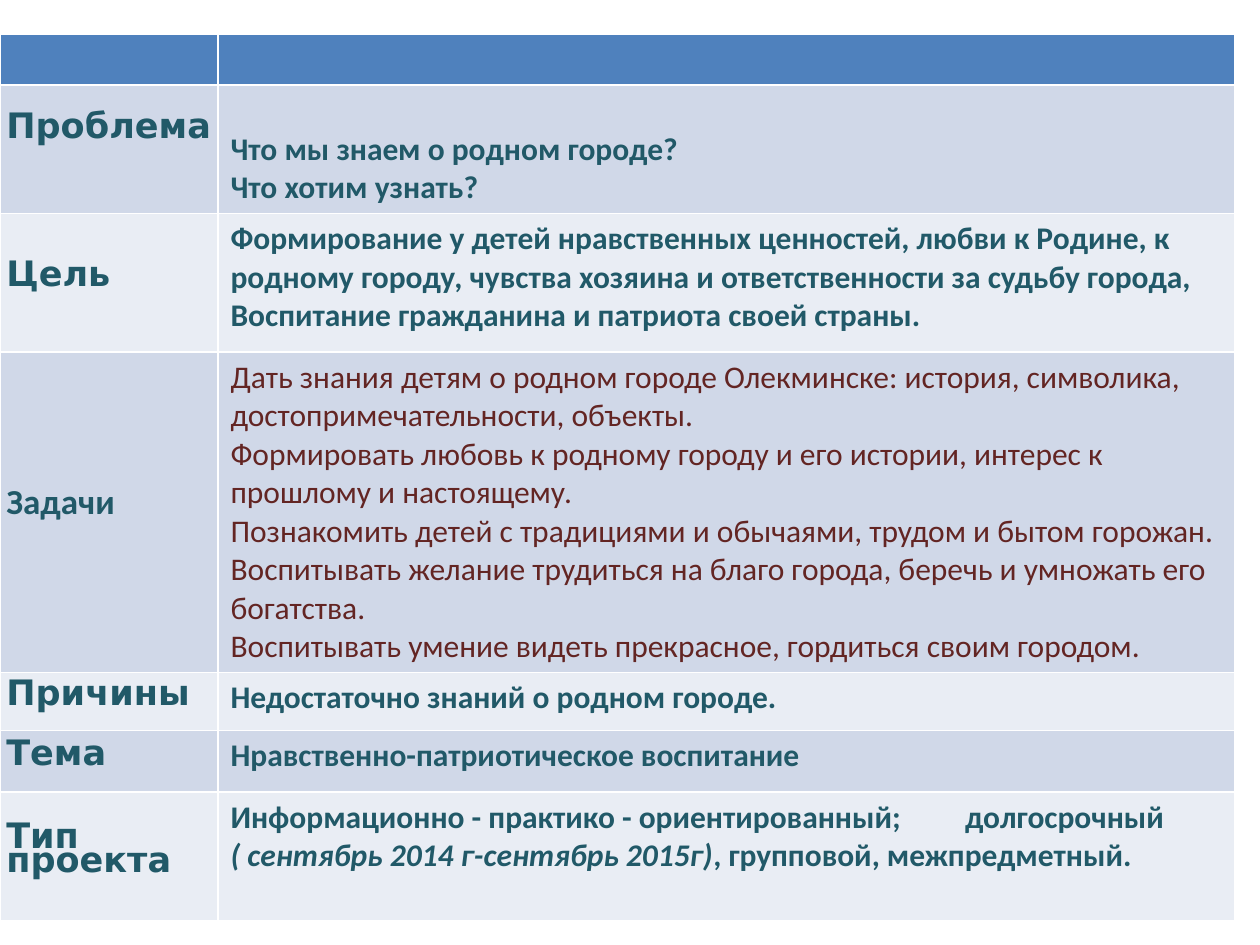
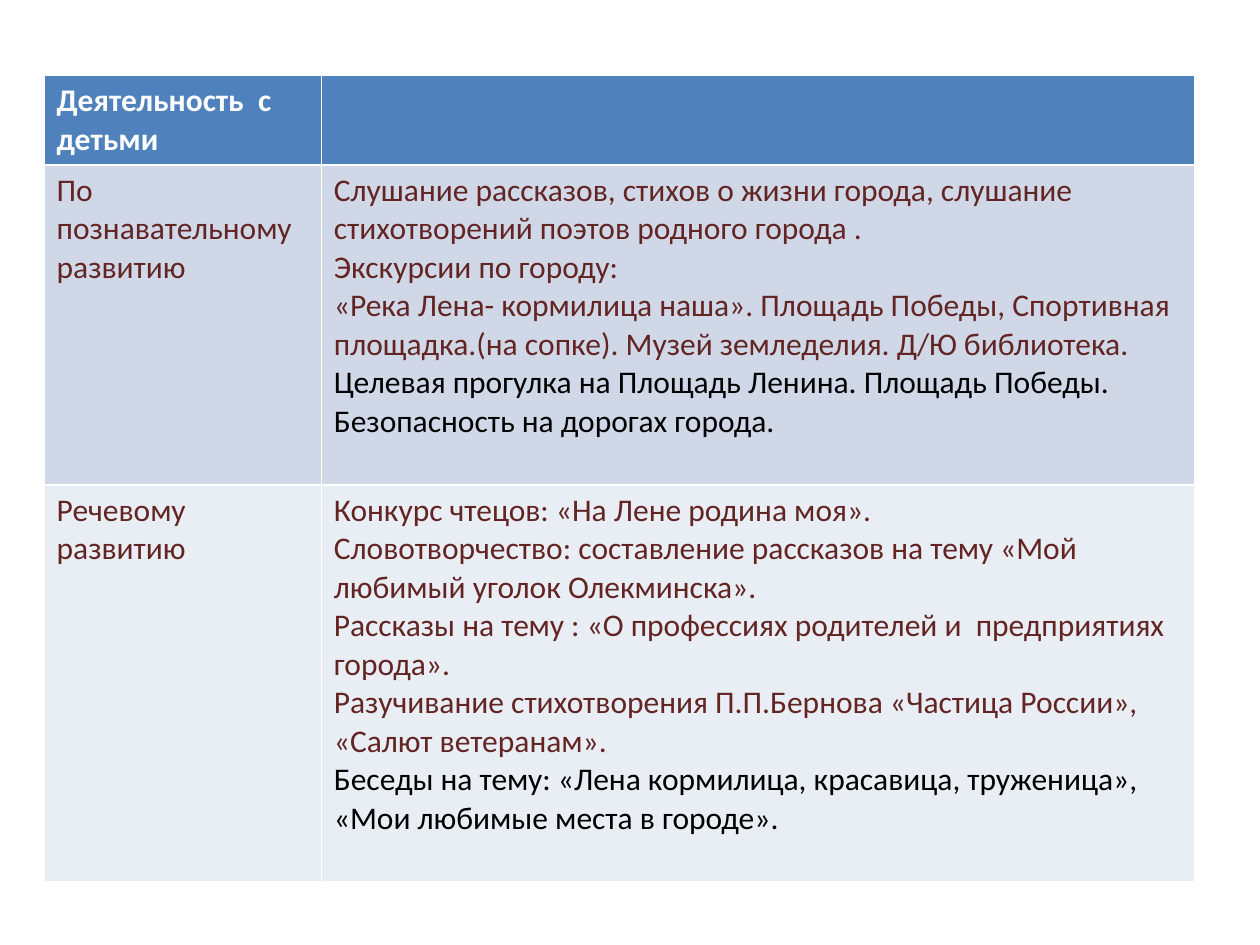
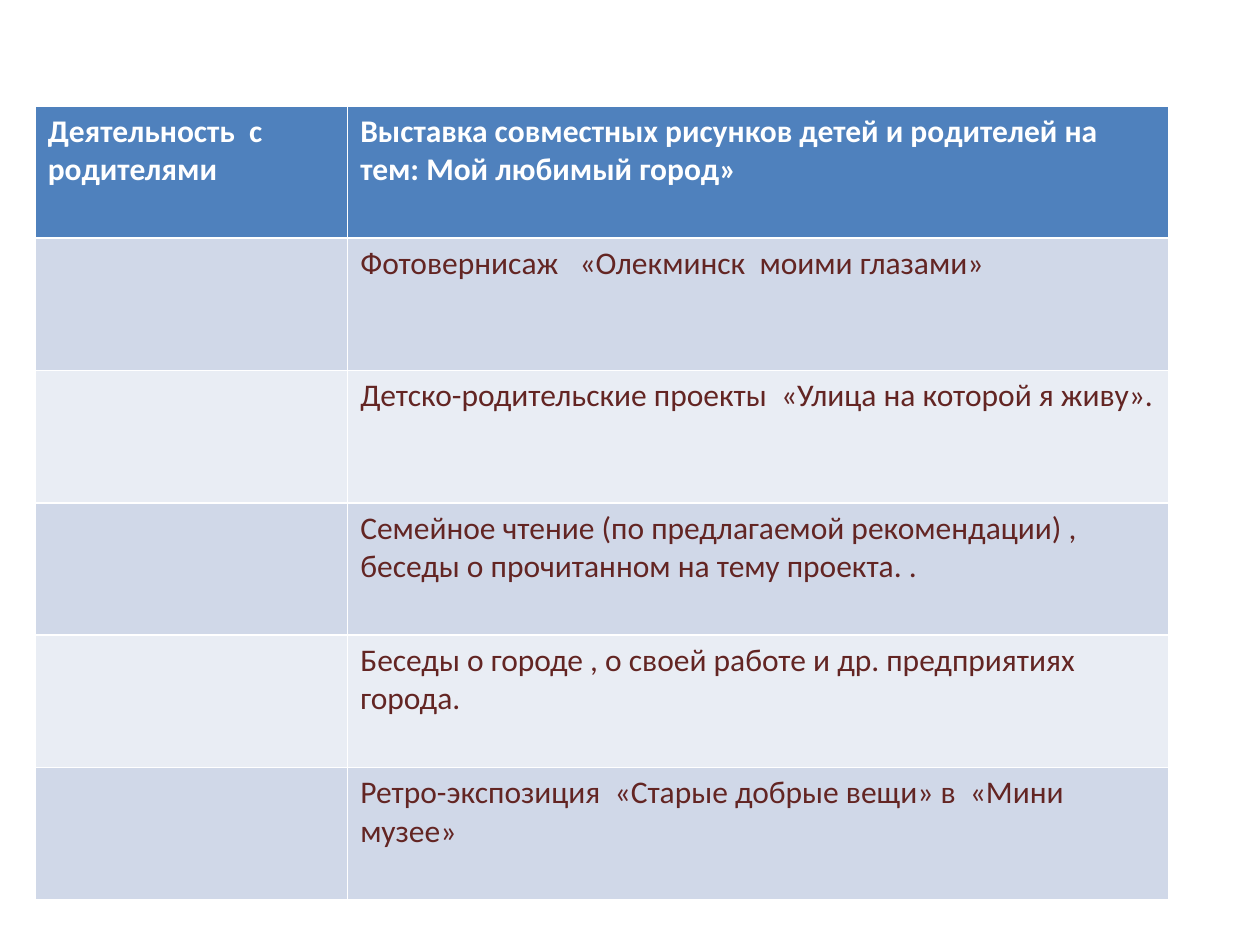
import pptx
import pptx.dml.color
import pptx.enum.text
import pptx.oxml
import pptx.oxml.ns
import pptx.util

RGBColor = pptx.dml.color.RGBColor
Anchor = pptx.enum.text.MSO_ANCHOR
Inches = pptx.util.Inches
Pt = pptx.util.Pt

BLUE = RGBColor(0x4F, 0x81, 0xBD)
BANDS = (RGBColor(0xD0, 0xD8, 0xE8), RGBColor(0xE9, 0xED, 0xF4))
WHITE = RGBColor(0xFF, 0xFF, 0xFF)
BLACK = RGBColor(0, 0, 0)
TEAL = RGBColor(0x21, 0x59, 0x68)
MAROON = RGBColor(0x63, 0x25, 0x23)
BODY_FONT, LABEL_FONT = "Calibri", "DejaVu Sans"

PASSPORT = [
    ("Проблема", ["Что мы знаем о родном городе?", "Что хотим узнать?"]),
    ("Цель", [
        "Формирование у детей нравственных ценностей, любви к Родине, к родному городу, "
        "чувства хозяина и ответственности за судьбу города,",
        "Воспитание гражданина и патриота своей страны."]),
    ("Задачи", [
        "Дать знания детям о родном городе Олекминске: история, символика, "
        "достопримечательности, объекты.",
        "Формировать любовь к родному городу и его истории, интерес к прошлому и настоящему.",
        "Познакомить детей с традициями и обычаями, трудом и бытом горожан.",
        "Воспитывать желание трудиться на благо города, беречь и умножать его богатства.",
        "Воспитывать умение видеть прекрасное, гордиться своим городом."]),
    ("Причины", ["Недостаточно знаний о родном городе."]),
    ("Тема", ["Нравственно-патриотическое воспитание"]),
    ("Тип проекта", []),
]
PROJECT_TYPE = [
    ("Информационно - практико - ориентированный;\tдолгосрочный  ", False),
    ("( сентябрь 2014 г-сентябрь 2015г)", True),
    (", групповой, межпредметный.", False),
]
CHILDREN = [
    ("По познавательному  развитию", [
        "Слушание рассказов, стихов о жизни города, слушание стихотворений поэтов "
        "родного города .",
        "Экскурсии по городу:",
        "«Река Лена- кормилица наша». Площадь Победы, Спортивная площадка.(на сопке). "
        "Музей земледелия. Д/Ю библиотека.",
        "Целевая прогулка на Площадь Ленина. Площадь Победы. Безопасность на дорогах города."]),
    ("Речевому развитию", [
        "Конкурс чтецов: «На Лене родина моя».",
        "Словотворчество: составление рассказов на тему «Мой любимый уголок Олекминска».",
        "Рассказы на тему : «О профессиях родителей и  предприятиях города».",
        "Разучивание стихотворения П.П.Бернова «Частица России», «Салют ветеранам».",
        "Беседы на тему: «Лена кормилица, красавица, труженица», "
        "«Мои любимые места в городе»."]),
]
PARENTS = [
    "Фотовернисаж   «Олекминск  моими глазами»",
    "Детско-родительские проекты  «Улица на которой я живу».",
    "Семейное чтение (по предлагаемой рекомендации) , беседы о прочитанном на тему проекта. .",
    "Беседы о городе , о своей работе и др. предприятиях города.",
    "Ретро-экспозиция  «Старые добрые вещи» в  «Мини музее»",
]


def add_run(p, text, color, bold=False, size=18, font=BODY_FONT, italic=False):
    """Append one formatted run to a paragraph."""
    r = p.add_run()
    r.text = text
    r.font.name, r.font.size = font, Pt(size)
    r.font.bold, r.font.italic = bold, italic
    r.font.color.rgb = color


def write(cell, lines, color, bold=False):
    """Write one paragraph per line into a cell."""
    tf = cell.text_frame
    for i, line in enumerate(lines):
        p = tf.add_paragraph() if i else tf.paragraphs[0]
        add_run(p, line, color, bold)


def write_label(cell, text, font):
    """Write a tightly spaced row label in the middle of its cell."""
    cell.vertical_anchor = Anchor.MIDDLE
    cell.margin_left = Inches(0.05)
    cell.margin_top = cell.margin_right = cell.margin_bottom = Inches(0.01)
    p = cell.text_frame.paragraphs[0]
    p.line_spacing = Pt(13.9)
    add_run(p, text, TEAL, True, 20, font)


def add_tab(p, position):
    """Set one left tab stop on a paragraph."""
    ppr = p._p.get_or_add_pPr()
    tabs = pptx.oxml.parse_xml(
        f'<a:tabLst {pptx.oxml.ns.nsdecls("a")}><a:tab pos="{position}" algn="l"/></a:tabLst>')
    ppr.append(tabs)


def add_banded_table(prs, box, cols, rows):
    """Add a slide with a banded table; box is in percent, cols and rows are weights."""
    s = prs.slides.add_slide(prs.slide_layouts[6])
    sides = (prs.slide_width, prs.slide_height) * 2
    x, y, w, h = (int(side * part / 100) for side, part in zip(sides, box))
    table = s.shapes.add_table(len(rows), len(cols), x, y, w, h).table
    for col, weight in zip(table.columns, cols):
        col.width = int(w * weight / sum(cols))
    for i, (row, weight) in enumerate(zip(table.rows, rows)):
        row.height = int(h * weight / sum(rows))
        for cell in row.cells:
            cell.fill.solid()
            cell.fill.fore_color.rgb = BANDS[(i - 1) % 2] if i else BLUE
    return table


def passport_slide(prs):
    """Build the project passport."""
    table = add_banded_table(prs, (0, 3.6, 98, 93.73), (1.73, 8.07),
                             (0.4, 1.02, 1.1, 2.54, 0.46, 0.49, 1.02))
    for i, (label, lines) in enumerate(PASSPORT, 1):
        tasks = label == "Задачи"
        write_label(table.cell(i, 0), label, BODY_FONT if tasks else LABEL_FONT)
        write(table.cell(i, 1), lines, MAROON if tasks else TEAL, not tasks)
    table.cell(1, 0).margin_bottom = Inches(0.25)
    table.cell(1, 1).vertical_anchor = Anchor.BOTTOM
    p = table.cell(len(PASSPORT), 1).text_frame.paragraphs[0]
    add_tab(p, Inches(5.83))
    for text, italic in PROJECT_TYPE:
        add_run(p, text, TEAL, True, italic=italic)


def children_slide(prs):
    """Build the activities with children."""
    table = add_banded_table(prs, (3.5, 8, 91.3, 85.33), (2.2, 6.93), (0.71, 2.54, 3.15))
    write(table.cell(0, 0), ["Деятельность  с", "детьми"], WHITE, True)
    for i, (label, lines) in enumerate(CHILDREN, 1):
        write(table.cell(i, 0), [label], MAROON)
        write(table.cell(i, 1), lines, MAROON)
        last = table.cell(i, 1).text_frame.paragraphs[-1]
        last.runs[0].font.color.rgb = BLACK


def parents_slide(prs):
    """Build the activities with parents."""
    table = add_banded_table(prs, (2.8, 11.2, 90, 84), (2.48, 6.52), [1] * (len(PARENTS) + 1))
    write(table.cell(0, 0), ["Деятельность  с родителями"], WHITE, True)
    write(table.cell(0, 1), ["Выставка совместных рисунков детей и родителей на тем: "
                             "Мой любимый город»"], WHITE, True)
    for i, line in enumerate(PARENTS, 1):
        write(table.cell(i, 1), [line], MAROON)


def main():
    """Build and save the presentation."""
    prs = pptx.Presentation()
    prs.slide_width, prs.slide_height = Inches(10), Inches(7.5)
    passport_slide(prs)
    children_slide(prs)
    parents_slide(prs)
    prs.save("out.pptx")


if __name__ == "__main__":
    main()
